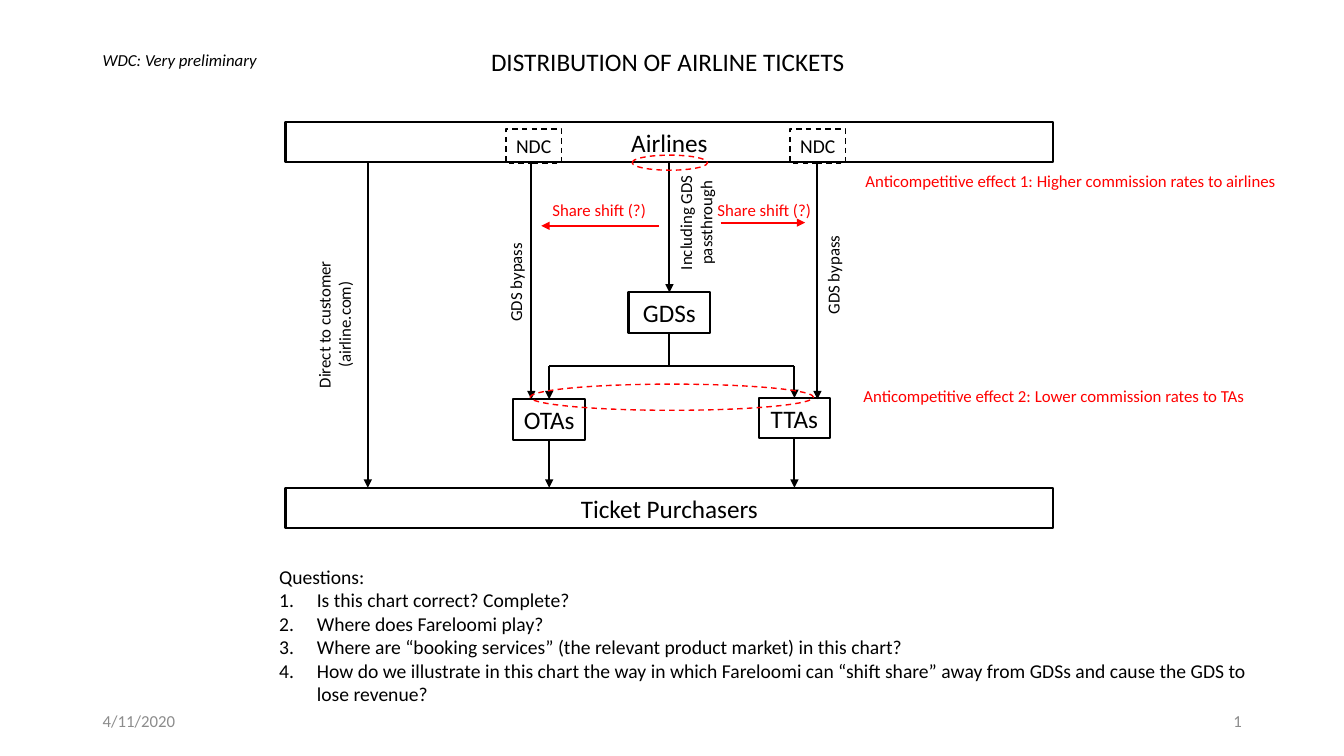
from lxml import etree
from pptx import Presentation
from pptx.dml.color import RGBColor
from pptx.enum.dml import MSO_LINE
from pptx.enum.shapes import MSO_CONNECTOR, MSO_SHAPE
from pptx.enum.text import MSO_ANCHOR, MSO_AUTO_SIZE, PP_ALIGN
from pptx.oxml.ns import qn
from pptx.util import Cm, Pt

BLACK = RGBColor(0x00, 0x00, 0x00)
RED = RGBColor(0xFF, 0x00, 0x00)
GRAY = RGBColor(0x8C, 0x8C, 0x8C)
LEFT, CENTER, RIGHT = PP_ALIGN.LEFT, PP_ALIGN.CENTER, PP_ALIGN.RIGHT
TOP, MIDDLE = MSO_ANCHOR.TOP, MSO_ANCHOR.MIDDLE
RECT, OVAL = MSO_SHAPE.RECTANGLE, MSO_SHAPE.OVAL
STRAIGHT, DASH, NO_FIT = MSO_CONNECTOR.STRAIGHT, MSO_LINE.DASH, MSO_AUTO_SIZE.NONE

# Content
TITLE = "DISTRIBUTION OF AIRLINE TICKETS"
QUESTIONS = [
    "Questions:",
    "Is this chart correct? Complete?",
    "Where does Fareloomi play?",
    "Where are “booking services” (the relevant product market) in this chart?",
    "How do we illustrate in this chart the way in which Fareloomi can “shift share” "
    "away from GDSs and cause the GDS to lose revenue?",
]

# Diagram grid in cm: columns, then rows
X_DIRECT, X_OTA_BYPASS, X_OTA, X_GDS, X_TTA, X_TTA_BYPASS = 9.27, 13.39, 13.84, 16.87, 20.02, 20.6
Y_AIRLINES, Y_GDS, Y_BRANCH, Y_OTA, Y_TTA, Y_BUYERS = 3.07, 7.37, 9.22, 10.06, 10.03, 12.29
BOX_H = 1.02
Y_START = Y_AIRLINES + BOX_H
BAR_MID, BAR_W = 16.87, 19.35

# Text, centre x, top, width
BOXES = [
    ("Airlines", BAR_MID, Y_AIRLINES, BAR_W),
    ("Ticket Purchasers", BAR_MID, Y_BUYERS, BAR_W),
    ("GDSs", X_GDS, Y_GDS, 2.06),
    ("OTAs", X_OTA, Y_OTA, 1.8),
    ("TTAs", X_TTA, Y_TTA, 1.8),
]
NDC_CENTERS = [13.45, 20.61]

# x1, y1, x2, y2, colour, arrowhead
LINES = [
    (X_DIRECT, Y_START, X_DIRECT, Y_BUYERS, BLACK, True),
    (X_GDS, Y_START, X_GDS, Y_GDS, BLACK, True),
    (X_OTA_BYPASS, Y_START, X_OTA_BYPASS, Y_OTA, BLACK, True),
    (X_TTA_BYPASS, Y_START, X_TTA_BYPASS, Y_OTA, BLACK, True),
    (X_GDS, Y_GDS + BOX_H, X_GDS, Y_BRANCH, BLACK, False),
    (X_OTA, Y_BRANCH, X_TTA, Y_BRANCH, BLACK, False),
    (X_OTA, Y_BRANCH, X_OTA, Y_OTA, BLACK, True),
    (X_TTA, Y_BRANCH, X_TTA, Y_TTA, BLACK, True),
    (X_OTA, Y_OTA + BOX_H, X_OTA, Y_BUYERS, BLACK, True),
    (X_TTA, Y_TTA + BOX_H, X_TTA, Y_BUYERS, BLACK, True),
    (16.61, 5.69, 13.64, 5.69, RED, True),
    (18.16, 5.61, 20.29, 5.61, RED, True),
]

# Lines of text, centre x, centre y, width, height
VERTICAL_LABELS = [
    (["Direct to customer", "(airline.com)"], 8.42, 8.18, 4.29, 1.27),
    (["GDS bypass"], 12.99, 7.11, 2.51, 0.76),
    (["GDS bypass"], 20.99, 6.93, 2.51, 0.76),
    (["Including GDS", "passthrough"], 17.53, 5.61, 3.45, 1.27),
]

# Text, left, top, width
RED_LABELS = [
    ("Share shift (?)", 13.67, 4.9, 2.9),
    ("Share shift (?)", 17.83, 4.9, 2.9),
    ("Anticompetitive effect 1: Higher commission rates to airlines", 21.56, 4.19, 11),
    ("Anticompetitive effect 2: Lower commission rates to TAs", 21.51, 9.6, 10.44),
]
RED_OVALS = [(15.93, 3.91, 1.9, 0.38), (13.36, 9.68, 7.14, 0.66)]


def add_text(shape, lines, size=12, color=BLACK, align=LEFT, anchor=TOP,
             italic=False, wrap=False, numbered=False):
    tf = shape.text_frame
    tf.auto_size, tf.word_wrap, tf.vertical_anchor = NO_FIT, wrap, anchor
    for i, line in enumerate(lines):
        p = tf.paragraphs[0] if i == 0 else tf.add_paragraph()
        p.alignment, p.space_before = align, Pt(0)
        if numbered:
            pPr = p._p.get_or_add_pPr()
            indent = Cm(0.95) if i else 0
            pPr.set("marL", str(indent))
            pPr.set("indent", str(-indent))
            if i:
                etree.SubElement(pPr, qn("a:buFont"), typeface="+mj-lt")
                etree.SubElement(pPr, qn("a:buAutoNum"), type="arabicPeriod")
            else:
                etree.SubElement(pPr, qn("a:buNone"))
        r = p.add_run()
        r.text = line
        r.font.name, r.font.size = "Calibri", Pt(size)
        r.font.color.rgb, r.font.italic = color, italic


def place(shape, *box):
    shape.left, shape.top, shape.width, shape.height = map(Cm, box)
    return shape


def add_box(*box):
    return s.shapes.add_textbox(*map(Cm, box))


def add_outline(kind, *box, color=BLACK, width=1.5, dash=None):
    sp = s.shapes.add_shape(kind, *map(Cm, box))
    sp.shadow.inherit = False
    sp.fill.background()
    sp.line.color.rgb, sp.line.width = color, Pt(width)
    if dash:
        sp.line.dash_style = dash
    return sp


def add_line(x1, y1, x2, y2, color, arrow):
    line = s.shapes.add_connector(STRAIGHT, Cm(x1), Cm(y1), Cm(x2), Cm(y2))
    line.line.color.rgb, line.line.width = color, Pt(1.5)
    if arrow:
        etree.SubElement(line.line._get_or_add_ln(), qn("a:tailEnd"), type="triangle")
    etree.SubElement(line._element.spPr, qn("a:effectLst"))


prs = Presentation()
prs.slide_width, prs.slide_height = Cm(33.87), Cm(19.05)
s = prs.slides.add_slide(prs.slide_layouts[1])

# Title and questions
add_text(place(s.shapes.title, 12.12, 1.04, 9.5, BOX_H), [TITLE], size=18)
add_text(place(s.placeholders[1], 6.78, 14.1, 25.7, 3.84), QUESTIONS,
         size=14, wrap=True, numbered=True)

# Boxes and flows
for text, mid, top, width in BOXES:
    sp = add_outline(RECT, mid - width / 2, top, width, BOX_H)
    add_text(sp, [text], size=18, align=CENTER, anchor=MIDDLE)
for line in LINES:
    add_line(*line)
for mid in NDC_CENTERS:
    sp = add_outline(RECT, mid - 0.7, 3.25, 1.4, 0.86, width=1, dash=DASH)
    add_text(sp, ["NDC"], size=14, align=CENTER, anchor=MIDDLE)

# Labels along the flows
for lines, mid_x, mid_y, width, height in VERTICAL_LABELS:
    sp = add_box(mid_x - width / 2, mid_y - height / 2, width, height)
    sp.rotation = 270
    add_text(sp, lines, align=CENTER)

# Effects in red
for text, left, top, width in RED_LABELS:
    add_text(add_box(left, top, width, 0.76), [text], color=RED)
for oval in RED_OVALS:
    add_outline(OVAL, *oval, color=RED, width=1, dash=DASH)

# Draft mark, date and page number
add_text(add_box(2.34, 1.12, 4.45, 0.76), ["WDC: Very preliminary"], italic=True)
for text, left, align in [("4/11/2020", 2.34, LEFT), ("1", 23.93, RIGHT)]:
    add_text(add_box(left, 17.65, 7.62, BOX_H), [text], color=GRAY,
             align=align, anchor=MIDDLE, wrap=True)

prs.save("out.pptx")
